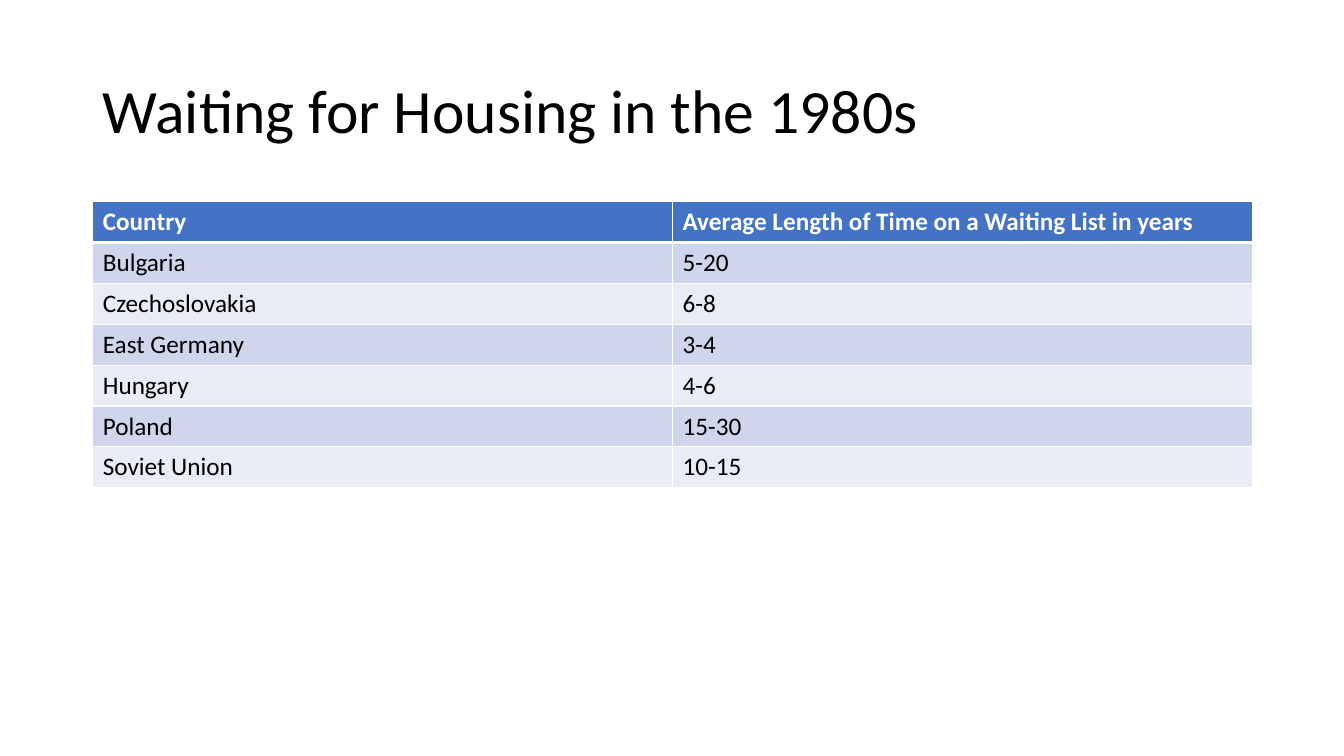
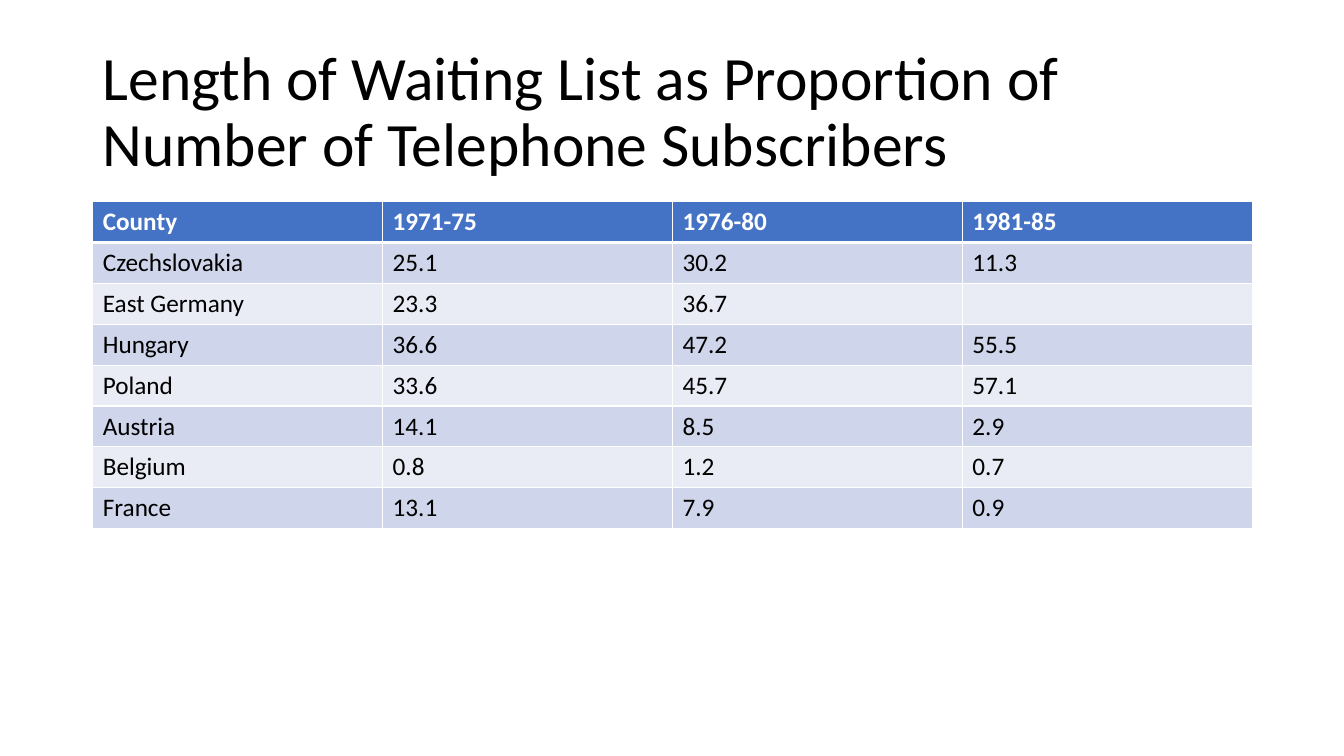
"""Build two slides of tables on waiting lists for housing and telephones."""
from dataclasses import dataclass

from lxml import etree
from pptx import Presentation
from pptx.dml.color import RGBColor
from pptx.enum.text import MSO_ANCHOR
from pptx.oxml.ns import qn
from pptx.util import Inches, Pt

MIDDLE = MSO_ANCHOR.MIDDLE


@dataclass(frozen=True)
class Theme:
    font: str = "Calibri"
    title_size: int = 44
    cell_size: int = 18
    text: str = "000000"
    light: str = "FFFFFF"
    header: str = "4472C4"
    bands: tuple = ("CFD5EA", "E9EBF5")
    thin: int = 1
    thick: int = 3


THEME = Theme()
LEFT, WIDTH = Inches(0.92), Inches(11.5)
TITLE_TOP, TITLE_HEIGHT = Inches(0.4), Inches(1.45)
TABLE_TOP, ROW_HEIGHT = Inches(2), Inches(29.2 / 72)

SLIDES = [
    ("Waiting for Housing in the 1980s", [
        ("Country", "Average Length of Time on a Waiting List in years"),
        ("Bulgaria", "5-20"),
        ("Czechoslovakia", "6-8"),
        ("East Germany", "3-4"),
        ("Hungary", "4-6"),
        ("Poland", "15-30"),
        ("Soviet Union", "10-15"),
    ]),
    ("Length of Waiting List as Proportion of Number of Telephone Subscribers", [
        ("County", "1971-75", "1976-80", "1981-85"),
        ("Czechslovakia", "25.1", "30.2", "11.3"),
        ("East Germany", "23.3", "36.7", ""),
        ("Hungary", "36.6", "47.2", "55.5"),
        ("Poland", "33.6", "45.7", "57.1"),
        ("Austria", "14.1", "8.5", "2.9"),
        ("Belgium", "0.8", "1.2", "0.7"),
        ("France", "13.1", "7.9", "0.9"),
    ]),
]


def add_run(p, text, size, color, bold=False):
    r = p.add_run()
    r.text = text
    r.font.name = THEME.font
    r.font.size = Pt(size)
    r.font.bold = bold
    r.font.color.rgb = RGBColor.from_string(color)


def add_title(s, text):
    tf = s.shapes.add_textbox(LEFT, TITLE_TOP, WIDTH, TITLE_HEIGHT).text_frame
    tf.word_wrap = True
    tf.vertical_anchor = MIDDLE
    p = tf.paragraphs[0]
    p.line_spacing = 0.9
    add_run(p, text, THEME.title_size, THEME.text)


def set_borders(cell, top, bottom):
    tc_pr = cell._tc.get_or_add_tcPr()
    widths = {"a:lnL": THEME.thin, "a:lnR": THEME.thin, "a:lnT": top, "a:lnB": bottom}
    for tag, width in widths.items():
        line = etree.SubElement(tc_pr, qn(tag), w=str(Pt(width)))
        fill = etree.SubElement(line, qn("a:solidFill"))
        etree.SubElement(fill, qn("a:srgbClr"), val=THEME.light)


def style_cell(cell, text, row):
    is_header = row == 0
    set_borders(cell, THEME.thick if row == 1 else THEME.thin,
                THEME.thick if is_header else THEME.thin)
    color = THEME.header if is_header else THEME.bands[(row - 1) % 2]
    cell.fill.solid()
    cell.fill.fore_color.rgb = RGBColor.from_string(color)
    if text:
        add_run(cell.text_frame.paragraphs[0], text, THEME.cell_size,
                THEME.light if is_header else THEME.text, is_header)


def add_data_table(s, rows):
    n_rows, n_cols = len(rows), len(rows[0])
    table = s.shapes.add_table(n_rows, n_cols, LEFT, TABLE_TOP, WIDTH,
                               ROW_HEIGHT * n_rows).table
    for i, values in enumerate(rows):
        for j, value in enumerate(values):
            style_cell(table.cell(i, j), value, i)


def main():
    prs = Presentation()
    prs.slide_width, prs.slide_height = Inches(13.33), Inches(7.5)
    blank = prs.slide_layouts[6]
    for title, rows in SLIDES:
        s = prs.slides.add_slide(blank)
        add_title(s, title)
        add_data_table(s, rows)
    prs.save("out.pptx")


if __name__ == "__main__":
    main()
